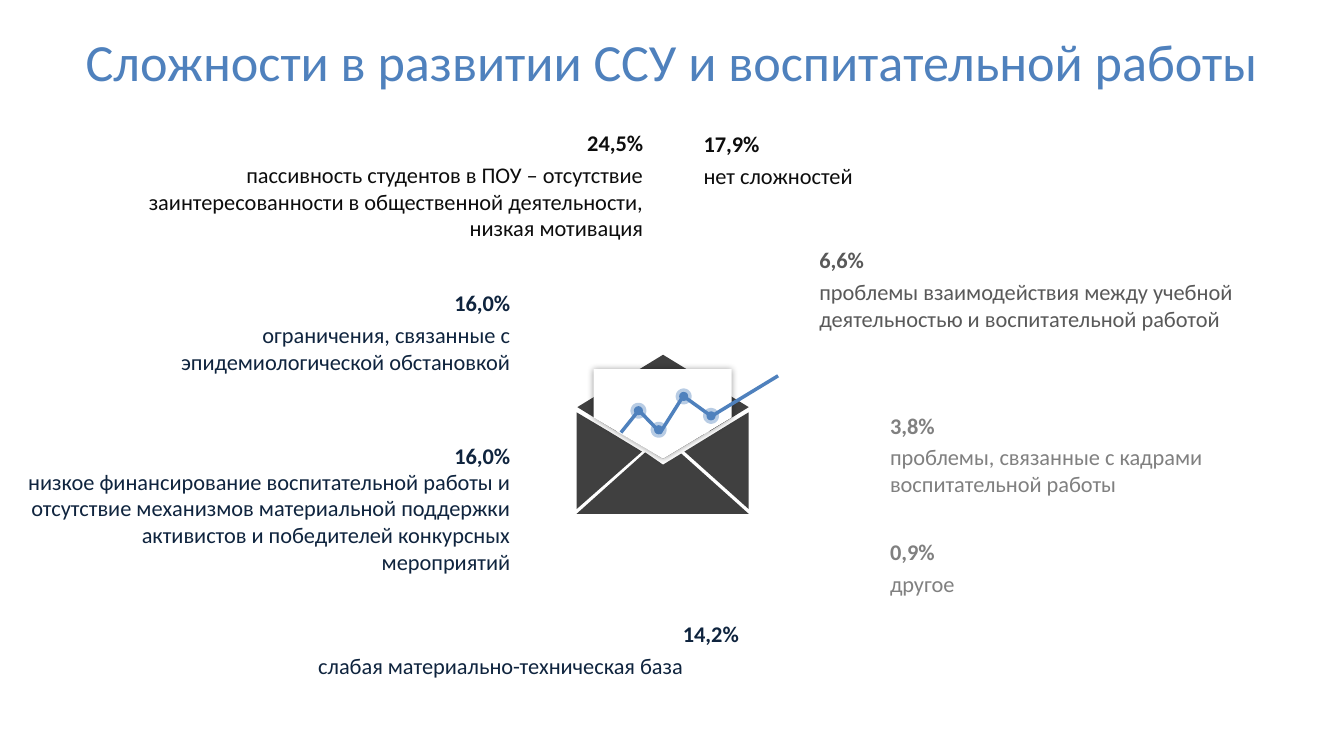
from lxml.etree import SubElement
from pptx import Presentation
from pptx.dml.color import RGBColor
from pptx.enum.shapes import MSO_SHAPE
from pptx.enum.text import MSO_ANCHOR, MSO_AUTO_SIZE, PP_ALIGN
from pptx.oxml import parse_xml
from pptx.oxml.ns import nsdecls, qn
from pptx.util import Cm, Pt

LEFT, RIGHT, MID = PP_ALIGN.LEFT, PP_ALIGN.RIGHT, PP_ALIGN.CENTER
BLUE, NAVY, BLACK = "4F81BD", "0F243E", "0D0D0D"
DARK, SLATE, GREY, WHITE = "404040", "595959", "808080", "FFFFFF"


def tint(code):
    return RGBColor.from_string(code)


class Deck:
    font = "Calibri"
    size = 16

    def __init__(self, wide, high):
        self.file = Presentation()
        self.file.slide_width = Cm(wide)
        self.file.slide_height = Cm(high)
        self.slide = self.file.slides.add_slide(self.file.slide_layouts[5])
        self.shapes = self.slide.shapes

    def put(self, frame, words, color, align, size=None, bold=False):
        frame.word_wrap = True
        para = frame.paragraphs[0]
        para.alignment = align
        run = para.add_run()
        run.text = words
        run.font.name = self.font
        run.font.size = Pt(size or self.size)
        run.font.bold = bold
        run.font.color.rgb = tint(color)

    def title(self, words, x, y, w, h):
        box = self.shapes.title
        box.left, box.top, box.width, box.height = Cm(x), Cm(y), Cm(w), Cm(h)
        frame = box.text_frame
        frame.auto_size = MSO_AUTO_SIZE.NONE
        frame.vertical_anchor = MSO_ANCHOR.MIDDLE
        self.put(frame, words, BLUE, MID, 37.3)

    def text(self, words, color, x, y, w, h, align, bold=False):
        frame = self.shapes.add_textbox(Cm(x), Cm(y), Cm(w), Cm(h)).text_frame
        self.put(frame, words, color, align, bold=bold)
        frame.auto_size = MSO_AUTO_SIZE.SHAPE_TO_FIT_TEXT

    def note(self, share, words, color, x, y, w, h, align, drop=0.8, head=None):
        self.text(words, color, x, y + drop, w, h, align)
        self.text(share, color, x, y, w, 0.94, head or align, True)

    def paint(self, shape, fill=None, line=None, width=1):
        shape.shadow.inherit = False
        if fill:
            shape.fill.solid()
            shape.fill.fore_color.rgb = tint(fill)
        else:
            shape.fill.background()
        if line:
            shape.line.color.rgb = tint(line)
            shape.line.width = Pt(width)
        else:
            shape.line.fill.background()

    def outline(self, parts, fill=None, line=None, width=1, close=True):
        pen = self.shapes.build_freeform(*parts[0][0], scale=Cm(0.01))
        for part in parts:
            if part is not parts[0]:
                pen.move_to(*part[0])
            pen.add_line_segments(part[1:], close=close)
        shape = pen.convert_to_shape()
        self.paint(shape, fill, line, width)
        return shape

    def glow(self, shape, blur, alpha):
        effects = shape._element.spPr.find(qn("a:effectLst"))
        effects.append(parse_xml(
            f'<a:outerShdw {nsdecls("a")} blurRad="{Pt(blur)}" dist="0" algn="ctr">'
            f'<a:srgbClr val="000000"><a:alpha val="{alpha * 1000}"/></a:srgbClr>'
            '</a:outerShdw>'))

    def dot(self, x, y, size):
        shape = self.shapes.add_shape(
            MSO_SHAPE.OVAL, Cm(x - size / 2), Cm(y - size / 2), Cm(size), Cm(size))
        self.paint(shape, BLUE, BLUE, 5)
        color = shape._element.spPr.find(qn("a:ln")).find(".//" + qn("a:srgbClr"))
        SubElement(color, qn("a:alpha"), val="40000")


def main():
    deck = Deck(33.87, 19.05)
    deck.title("Сложности в развитии ССУ и воспитательной работы", 0, 0.46, 33.87, 2.13)

    notes = [
        ("24,5%", "пассивность студентов в ПОУ – отсутствие заинтересованности "
         "в общественной деятельности, низкая мотивация",
         BLACK, 1.93, 3.13, 14.53, 2.31, RIGHT),
        ("16,0%", "ограничения, связанные с эпидемиологической обстановкой",
         NAVY, 3.71, 7.16, 9.4, 1.63, RIGHT),
        ("16,0%", "низкое финансирование воспитательной работы и отсутствие "
         "механизмов материальной поддержки активистов и победителей "
         "конкурсных мероприятий",
         NAVY, 0.25, 11.02, 12.86, 3, RIGHT, 0.64),
        ("14,2%", "слабая материально-техническая база",
         NAVY, 7.77, 15.5, 11.1, 0.94, LEFT, 0.8, RIGHT),
        ("17,9%", "нет сложностей", BLACK, 17.48, 3.15, 9.4, 0.94, LEFT),
        ("6,6%", "проблемы взаимодействия между учебной деятельностью "
         "и воспитательной работой",
         SLATE, 20.4, 6.09, 11.46, 1.63, LEFT),
        ("3,8%", "проблемы, связанные с кадрами воспитательной работы",
         GREY, 22.18, 10.25, 9.4, 1.63, LEFT),
        ("0,9%", "другое", GREY, 22.18, 13.44, 9.4, 0.94, LEFT),
    ]
    for note in notes:
        deck.note(*note)

    base = [(1626, 1140), (1671, 1171), (1717, 1143), (1887, 1295), (1453, 1295)]
    east = [(1887, 1039), (1887, 1283), (1725, 1138), (1862, 1054)]
    west = [(1453, 1039), (1534, 1087), (1618, 1138), (1453, 1283)]
    page = [(1570, 996), (1773, 996), (1773, 1095), (1671, 1156), (1570, 1095)]
    flap = [(1671, 894), (1887, 1026), (1788, 1087), (1788, 983),
            (1554, 983), (1554, 1087), (1455, 1026)]
    rows = [[(1598, y), (1598, y + 13), (1745, y + 13), (1745, y)]
            for y in (1077, 1052, 1026)]
    deck.outline([base, east, west, page, flap, *rows], DARK)

    card = [(1496, 930), (1844, 930), (1844, 1052), (1671, 1156), (1496, 1052)]
    deck.glow(deck.outline([card], WHITE), 5, 40)

    trend = [(1565, 1090), (1610, 1034), (1664, 1090),
             (1722, 998), (1793, 1049), (1961, 947)]
    deck.outline([trend], line=BLUE, width=2.5, close=False)
    for x, y in [(17.23, 9.99), (17.92, 10.48), (16.6, 10.83), (16.09, 10.35)]:
        deck.dot(x, y, 0.23)

    deck.file.save("out.pptx")


if __name__ == "__main__":
    main()
